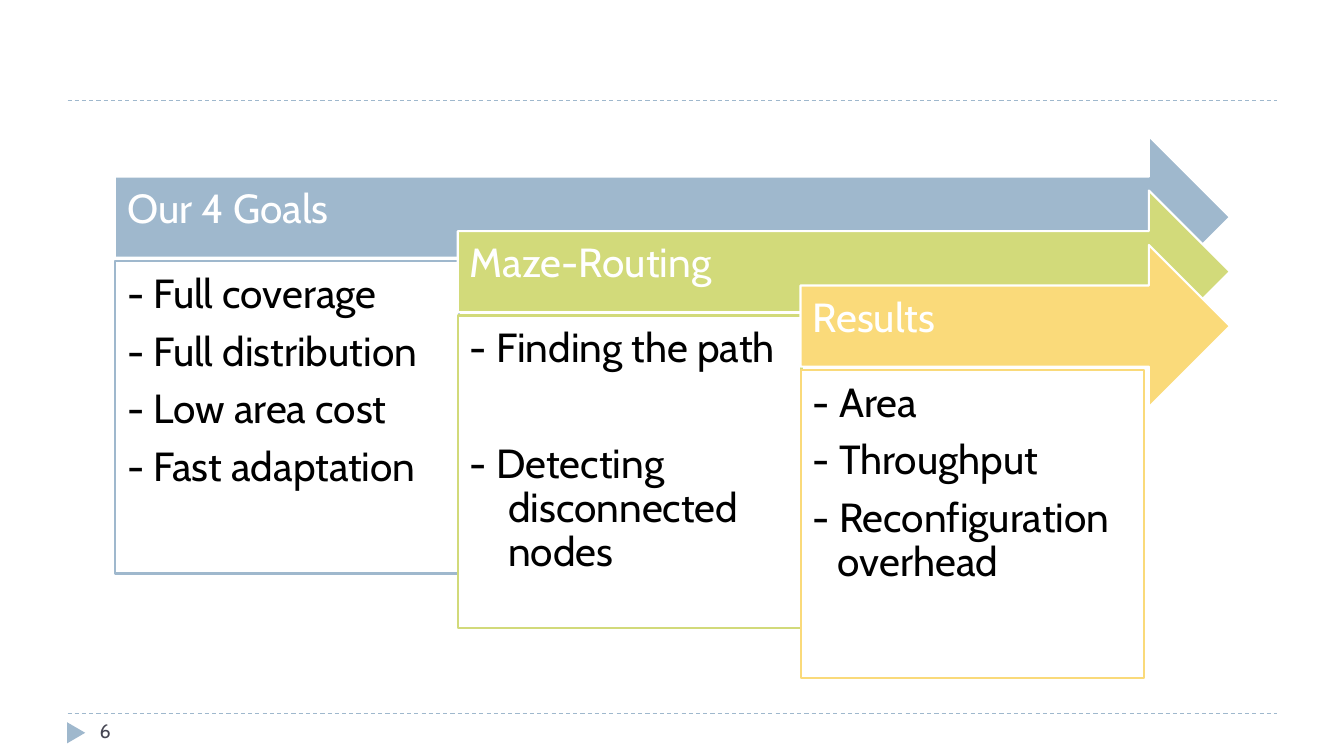
from lxml import etree
from pptx import Presentation
from pptx.dml.color import RGBColor
from pptx.enum.dml import MSO_LINE
from pptx.enum.shapes import MSO_CONNECTOR, MSO_SHAPE
from pptx.enum.text import MSO_ANCHOR, PP_ALIGN
from pptx.oxml.ns import qn
from pptx.util import Inches, Pt

ARROW, RECT, TRIANGLE = MSO_SHAPE.RIGHT_ARROW, MSO_SHAPE.RECTANGLE, MSO_SHAPE.ISOSCELES_TRIANGLE
STRAIGHT, DASH = MSO_CONNECTOR.STRAIGHT, MSO_LINE.DASH
TOP, MIDDLE, LEFT = MSO_ANCHOR.TOP, MSO_ANCHOR.MIDDLE, PP_ALIGN.LEFT

FONT = "Cabin"
BLUE, GREEN, YELLOW = "9FB8CD", "D2DA7A", "FADA7A"
WHITE, BLACK, SLATE = "FFFFFF", "000000", "464653"

FIRST_LEFT, FIRST_TOP = 1.14, 1.35
COLUMN_STEP, ROW_STEP = 3.4, 0.54
ARROW_END, ARROW_HEIGHT = 12.2, 1.61
BODY_OFFSET, BODY_WIDTH = 1.24, 3.41

# Heading, colour, body height, then (text, hanging indent, space before in points)
STAGES = [
    ("Our 4 Goals", BLUE, 3.1, [
        ("- Full coverage", 0, 0), ("- Full distribution", 0, 0),
        ("- Low area cost", 0, 0), ("- Fast adaptation", 0, 0)]),
    ("Maze-Routing", GREEN, 3.1, [
        ("- Finding the path", 0, 0), ("- Detecting disconnected nodes", 0.38, 41.5)]),
    ("Results", YELLOW, 3.06, [
        ("- Area", 0, 0), ("- Throughput", 0, 0), ("- Reconfiguration overhead", 0.25, 0)]),
]


def rgb(color):
    return RGBColor.from_string(color)


def set_frame(tf, insets, anchor=TOP):
    """Insets run left, top, right, bottom."""
    tf.word_wrap = True
    tf.vertical_anchor = anchor
    tf.margin_left, tf.margin_top, tf.margin_right, tf.margin_bottom = map(Inches, insets)


def write(p, text, size=29, color=BLACK, hanging=0, before=0, after=10, spacing=0.9):
    p.alignment = LEFT
    p.line_spacing = spacing
    p.space_before, p.space_after = Pt(before), Pt(after)
    if hanging:
        pPr = p._p.get_or_add_pPr()
        pPr.set("marL", str(Inches(hanging)))
        pPr.set("indent", str(-Inches(hanging)))
    r = p.add_run()
    r.text = text
    r.font.name, r.font.size = FONT, Pt(size)
    r.font.color.rgb = rgb(color)


def add_shape(s, kind, box, fill, line=None):
    sp = s.shapes.add_shape(kind, *map(Inches, box))
    sp.shadow.inherit = False
    sp.fill.solid()
    sp.fill.fore_color.rgb = rgb(fill)
    if line:
        sp.line.color.rgb = rgb(line)
        sp.line.width = Pt(1.5)
    else:
        sp.line.fill.background()
    return sp


def add_rule(s, y):
    rule = s.shapes.add_connector(STRAIGHT, *map(Inches, (0.67, y, 12.67, y)))
    rule.line.color.rgb = rgb(BLUE)
    rule.line.width = Pt(0.75)
    rule.line.dash_style = DASH
    etree.SubElement(rule._element.spPr, qn("a:effectLst"))


def add_stage(s, index, heading, color, body_height, items):
    left = FIRST_LEFT + index * COLUMN_STEP
    top = FIRST_TOP + index * ROW_STEP

    arrow = add_shape(s, ARROW, (left, top, ARROW_END - left, ARROW_HEIGHT), color, WHITE)
    set_frame(arrow.text_frame, (0.12, 0.12, 0.28, 0.26), MIDDLE)
    write(arrow.text_frame.paragraphs[0], heading, color=WHITE)

    body = add_shape(s, RECT, (left, top + BODY_OFFSET, BODY_WIDTH, body_height), WHITE, color)
    tf = body.text_frame
    set_frame(tf, (0.12, 0.12, 0.12, 0.12))
    for i, (text, hanging, before) in enumerate(items):
        p = tf.add_paragraph() if i else tf.paragraphs[0]
        write(p, text, hanging=hanging, before=before)


def add_page_number(s, number):
    marker = add_shape(s, TRIANGLE, (0.65, 7.18, 0.21, 0.18), BLUE)
    marker.rotation = 90
    tf = s.shapes.add_textbox(*map(Inches, (0.89, 7.08, 2.89, 0.4))).text_frame
    set_frame(tf, (0.1, 0.05, 0.1, 0.05))
    write(tf.paragraphs[0], number, size=14, color=SLATE, after=0, spacing=1.0)


def main():
    prs = Presentation()
    prs.slide_width, prs.slide_height = Inches(13.33), Inches(7.5)
    s = prs.slides.add_slide(prs.slide_layouts[6])
    for y in (7.08, 1):
        add_rule(s, y)
    for i, stage in enumerate(STAGES):
        add_stage(s, i, *stage)
    add_page_number(s, "6")
    prs.save("out.pptx")


if __name__ == "__main__":
    main()
